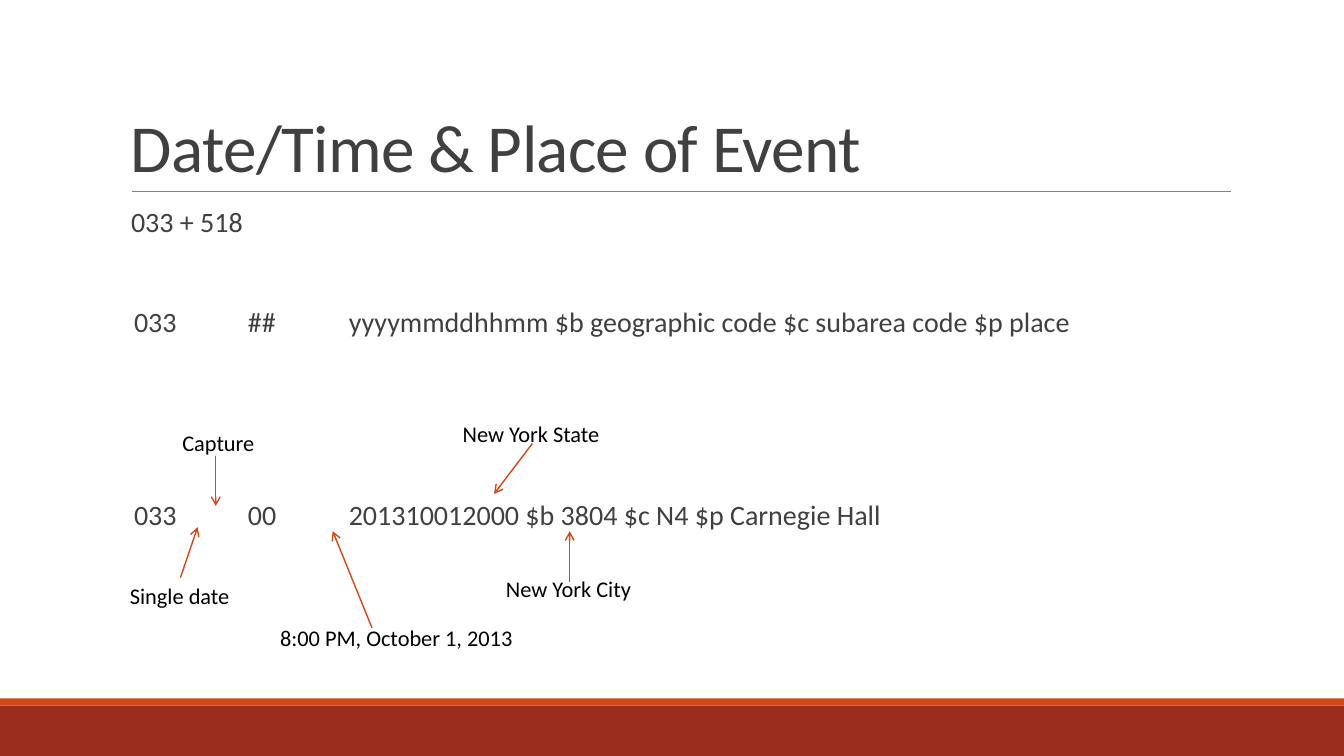
from lxml.etree import SubElement
from pptx import Presentation
from pptx.dml.color import RGBColor
from pptx.enum.shapes import MSO_CONNECTOR as Link, MSO_SHAPE as Shape
from pptx.enum.text import MSO_ANCHOR as Anchor, MSO_AUTO_SIZE as Fit
from pptx.oxml.ns import qn
from pptx.util import Inches, Pt

WHITE = RGBColor(0xFF, 0xFF, 0xFF)
BLACK = RGBColor(0, 0, 0)
DARK = RGBColor(0x40, 0x40, 0x40)
GRAY = RGBColor(0x80, 0x80, 0x80)
RED = RGBColor(0x9B, 0x2D, 0x1F)
ORANGE = RGBColor(0xD3, 0x48, 0x17)

# Field text, left margin, first-line indent (inches), space before (points)
FIELDS = [
    ("033 + 518", 0.1, 0, 0),
    ("033\t##\tyyyymmddhhmm $b geographic code $c subarea code $p place",
     1.26, -1.13, 49.5),
    ("033\t00\t201310012000 $b 3804 $c N4 $p Carnegie Hall",
     1.26, -1.13, 116.5),
]
# Label, its left, top and width, then the arrow's start and end
NOTES = [
    ("Single date", 1.19, 5.73, 1.2, (1.79, 5.73), (1.96, 5.23)),
    ("Capture", 1.71, 4.21, 0.93, (2.14, 4.52), (2.14, 5.02)),
    ("8:00 PM, October 1, 2013", 2.68, 6.14, 2.54, (3.69, 6.23), (3.3, 5.27)),
    ("New York State", 4.49, 4.12, 1.58, (5.28, 4.4), (4.9, 4.9)),
    ("New York City", 4.92, 5.66, 1.46, (5.65, 5.77), (5.65, 5.27)),
]


def add_band(slide, top, height, color):
    band = slide.shapes.add_shape(
        Shape.RECTANGLE, 0, Inches(top), Inches(13.33), Inches(height))
    band.shadow.inherit = False
    band.fill.solid()
    band.fill.fore_color.rgb = color
    band.line.fill.background()


def add_line(slide, start, end, color, width, arrow=False):
    line = slide.shapes.add_connector(
        Link.STRAIGHT, *(Inches(n) for n in start + end))
    line.line.color.rgb = color
    line.line.width = Pt(width)
    props = line._element.spPr
    if arrow:
        SubElement(props.find(qn("a:ln")), qn("a:tailEnd"), type="arrow")
    SubElement(props, qn("a:effectLst"))


def add_box(slide, left, top, width, height, wrap=True):
    box = slide.shapes.add_textbox(
        Inches(left), Inches(top), Inches(width), Inches(height))
    box.text_frame.word_wrap = wrap
    return box.text_frame


def set_font(para, size, color):
    para.font.name = "Calibri"
    para.font.size = Pt(size)
    para.font.color.rgb = color


def add_title(slide, text):
    frame = add_box(slide, 1.2, 0.31, 11, 1.59)
    frame.vertical_anchor = Anchor.BOTTOM
    para = frame.paragraphs[0]
    run = para.add_run()
    run.text = text
    run.font._element.set("spc", "-50")
    para.line_spacing = 0.85
    set_font(para, 48, DARK)


def add_fields(slide):
    """Write the field lines; their columns follow the margin and a 1 inch tab."""
    frame = add_box(slide, 1.2, 2.02, 11, 4.4)
    frame.margin_left = frame.margin_right = 0
    for i, (text, left, indent, gap) in enumerate(FIELDS):
        para = frame.add_paragraph() if i else frame.paragraphs[0]
        para.text = text
        para.line_spacing = 0.9
        para.space_before = Pt(gap)
        props = para._p.get_or_add_pPr()
        props.set("marL", str(Inches(left)))
        props.set("indent", str(Inches(indent)))
        if "\t" in text:
            props.set("defTabSz", str(Inches(1)))
            tabs = SubElement(props, qn("a:tabLst"))
            SubElement(tabs, qn("a:tab"), pos=str(Inches(left + 1)), algn="l")
        set_font(para, 20, DARK)


def add_label(slide, text, left, top, width):
    frame = add_box(slide, left, top, width, 0.37, wrap=False)
    frame.auto_size = Fit.SHAPE_TO_FIT_TEXT
    para = frame.paragraphs[0]
    para.text = text
    set_font(para, 16, BLACK)


def main():
    deck = Presentation()
    deck.slide_width, deck.slide_height = Inches(13.33), Inches(7.5)
    slide = deck.slides.add_slide(deck.slide_layouts[6])
    slide.background.fill.solid()
    slide.background.fill.fore_color.rgb = WHITE
    add_band(slide, 7, 0.5, RED)
    add_band(slide, 6.93, 0.07, ORANGE)
    add_line(slide, (1.31, 1.9), (12.21, 1.9), GRAY, 0.5)
    add_title(slide, "Date/Time & Place of Event")
    add_fields(slide)
    for text, left, top, width, start, end in NOTES:
        add_line(slide, start, end, ORANGE, 1, arrow=True)
        add_label(slide, text, left, top, width)
    deck.save("out.pptx")


if __name__ == "__main__":
    main()
